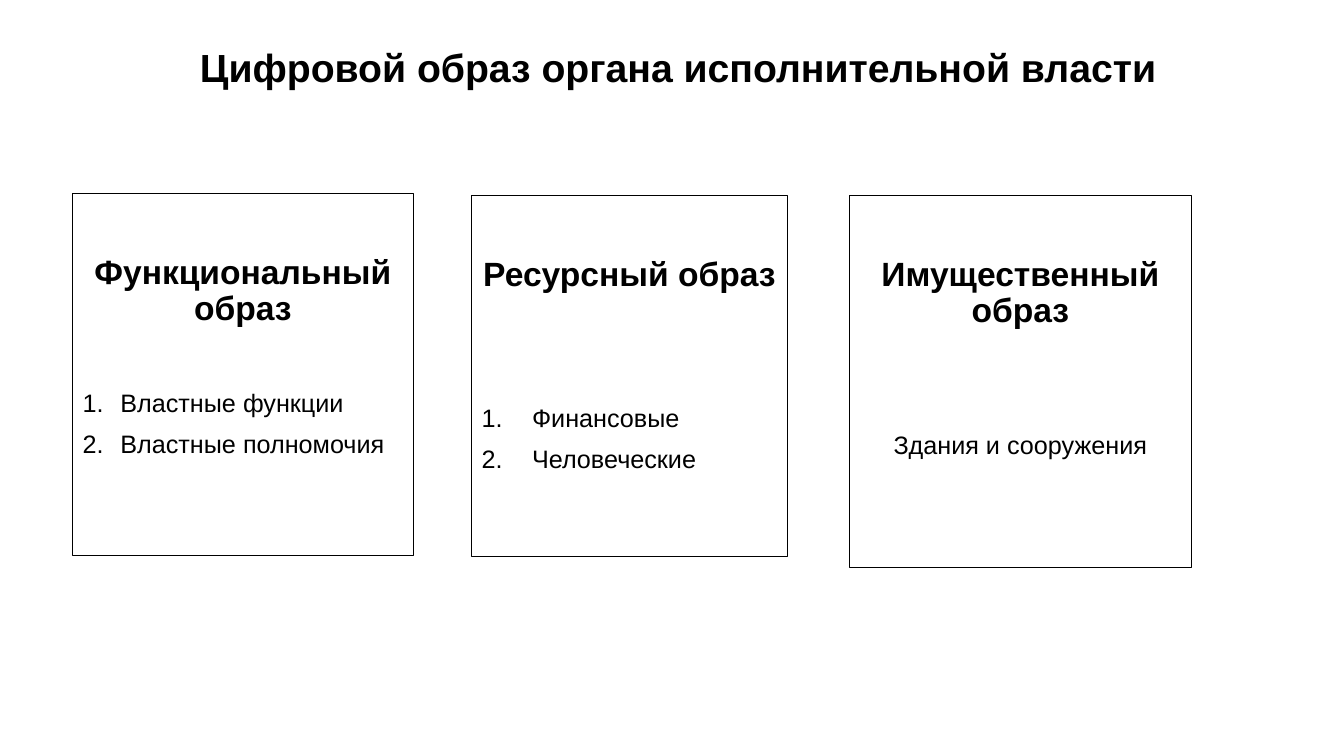
import pptx
import pptx.util
import pptx.dml.color
import pptx.enum.shapes
import pptx.enum.text
import pptx.oxml.ns
import lxml.etree

Cm = pptx.util.Cm
Pt = pptx.util.Pt
Align = pptx.enum.text.PP_ALIGN
Anchor = pptx.enum.text.MSO_ANCHOR

COLOURS = {"ink": "000000"}
INK = pptx.dml.color.RGBColor.from_string(COLOURS["ink"])


def format_paragraph(para, size, bold, align, before=0):
    para.alignment = align
    para.line_spacing = 0.9
    para.space_before = Pt(before)
    for span in para.runs:
        span.font.name = "Arial"
        span.font.size = Pt(size)
        span.font.bold = bold
        span.font.color.rgb = INK


def set_bullet(para, indent, numbered):
    properties = para._p.get_or_add_pPr()
    properties.set("marL", str(indent))
    properties.set("indent", str(-indent))
    tag = "a:buAutoNum" if numbered else "a:buNone"
    bullet = lxml.etree.SubElement(properties, pptx.oxml.ns.qn(tag))
    if numbered:
        bullet.set("type", "arabicPeriod")


deck = pptx.Presentation()
deck.slide_width = Cm(33.87)
deck.slide_height = Cm(19.05)
page = deck.slides.add_slide(deck.slide_layouts[1])

# Title
title = page.shapes.title
title.left, title.top, title.width, title.height = Cm(2.64), Cm(1.02), Cm(28.9), Cm(1.5)
title.text_frame.text = "Цифровой образ органа исполнительной власти"
title.text_frame.auto_size = pptx.enum.text.MSO_AUTO_SIZE.NONE
title.text_frame.vertical_anchor = Anchor.MIDDLE
format_paragraph(title.text_frame.paragraphs[0], 28, True, Align.CENTER)

# Three images: place in cm, heading, items, gap above the items in pt, number indent in cm
images = [
    ((1.83, 4.88, 8.58, 9.12), "Функциональный образ",
     ["Властные функции", "Властные полномочия"], 44.8, 0.95),
    ((11.89, 4.93, 7.95, 9.09), "Ресурсный образ",
     ["Финансовые", "Человеческие"], 79.6, 1.27),
    ((21.41, 4.93, 8.61, 9.37), "Имущественный образ",
     ["Здания и сооружения"], 73.4, 0),
]

for number, (place, heading, items, gap, indent) in enumerate(images):
    left, top, width, height = [Cm(length) for length in place]
    if number == 0:
        box = page.placeholders[1]
        box.left, box.top, box.width, box.height = left, top, width, height
    else:
        box = page.shapes.add_shape(
            pptx.enum.shapes.MSO_SHAPE.RECTANGLE, left, top, width, height)
        box.shadow.inherit = False
    box.fill.background()
    box.line.color.rgb = INK
    box.line.width = Pt(0.75)

    frame = box.text_frame
    frame.text = "\n".join([heading] + items)
    frame.word_wrap = True
    frame.auto_size = pptx.enum.text.MSO_AUTO_SIZE.NONE
    frame.vertical_anchor = Anchor.TOP
    frame.margin_top = Cm(1.56)

    # Heading, then its items
    first, *rest = frame.paragraphs
    format_paragraph(first, 24, True, Align.CENTER)
    set_bullet(first, 0, False)
    for position, para in enumerate(rest):
        format_paragraph(para, 18, False, Align.LEFT if indent else Align.CENTER,
                         10 if position else gap)
        set_bullet(para, Cm(indent), indent > 0)

deck.save("out.pptx")
